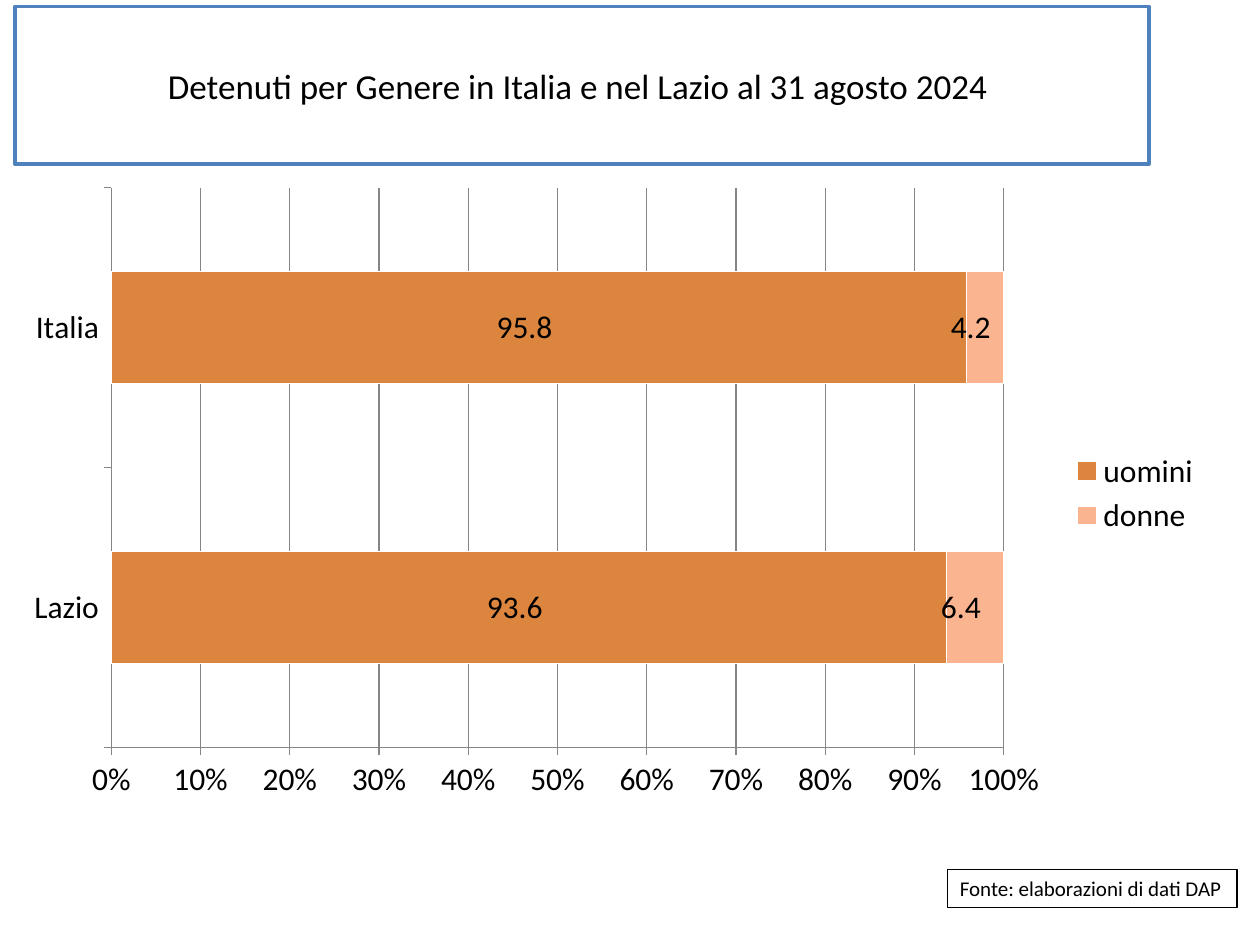
from dataclasses import dataclass

from lxml.etree import SubElement
from pptx import Presentation
from pptx.chart.data import CategoryChartData
from pptx.dml.color import RGBColor
from pptx.enum.chart import XL_CHART_TYPE, XL_LABEL_POSITION, XL_LEGEND_POSITION, XL_TICK_MARK
from pptx.enum.text import MSO_ANCHOR, PP_ALIGN
from pptx.oxml.ns import qn
from pptx.util import Cm, Pt


@dataclass(frozen=True)
class Theme:
    font: str = "Calibri"
    text: str = "000000"
    paper: str = "FFFFFF"
    accent: str = "4F81BD"
    grid: str = "868686"
    men: str = "DC853E"
    women: str = "FAB490"
    title_size: int = 20
    chart_size: int = 18
    source_size: int = 12


class PageBuilder:
    """Holds the theme and the current slide."""

    def __init__(self, theme, page):
        self.theme = theme
        self.page = page

    def style_font(self, font, size):
        font.name = self.theme.font
        font.size = Pt(size)
        font.bold = False
        font.color.rgb = RGBColor.from_string(self.theme.text)

    def paint(self, item, fill, line, width):
        item.fill.solid()
        item.fill.fore_color.rgb = RGBColor.from_string(fill)
        self.paint_line(item.line, line, width)

    def paint_line(self, line, color, width):
        line.color.rgb = RGBColor.from_string(color)
        line.width = Pt(width)

    def set_text(self, box, text, size, align):
        para = box.text_frame.paragraphs[0]
        para.text = text
        para.alignment = align
        self.style_font(para.font, size)

    def title(self, text, left, top, width, height):
        box = self.page.shapes.title
        box.left, box.top, box.width, box.height = left, top, width, height
        self.paint(box, self.theme.paper, self.theme.accent, 2)
        box.text_frame.vertical_anchor = MSO_ANCHOR.MIDDLE
        self.set_text(box, text, self.theme.title_size, PP_ALIGN.CENTER)

    def source_note(self, text, left, top, width, height):
        box = self.page.shapes.add_textbox(left, top, width, height)
        self.paint(box, self.theme.paper, self.theme.text, 0.75)
        box.text_frame.word_wrap = False
        self.set_text(box, text, self.theme.source_size, PP_ALIGN.LEFT)

    def share_chart(self, categories, series, left, top, width, height):
        data = CategoryChartData()
        data.categories = categories
        for name, values, _ in series:
            data.add_series(name, values)
        chart = self.page.shapes.add_chart(
            XL_CHART_TYPE.BAR_STACKED_100, left, top, width, height, data).chart
        chart.has_title = False
        self.style_font(chart.font, self.theme.chart_size)

        # Bars and value labels
        plot = chart.plots[0]
        plot.gap_width, plot.overlap = 150, 100
        plot.vary_by_categories = False
        for bars, (_, _, color) in zip(plot.series, series):
            self.paint(bars.format, color, self.theme.paper, 0.75)
            labels = bars.data_labels
            labels.show_value = True
            labels.position = XL_LABEL_POSITION.CENTER
            labels.number_format = "#,##0.0\\ _€_-"
            labels.number_format_is_linked = False

        # Axes and grid
        for axis in (chart.category_axis, chart.value_axis):
            axis.major_tick_mark = XL_TICK_MARK.OUTSIDE
            axis.minor_tick_mark = XL_TICK_MARK.NONE
            self.paint_line(axis.format.line, self.theme.grid, 0.75)
        scale = chart.value_axis
        scale.minimum_scale, scale.maximum_scale, scale.major_unit = 0, 1, 0.1
        scale.has_major_gridlines = True
        self.paint_line(scale.major_gridlines.format.line, self.theme.grid, 0.75)
        scale.tick_labels.number_format = "0%"
        scale.tick_labels.number_format_is_linked = False

        # Legend
        chart.has_legend = True
        chart.legend.position = XL_LEGEND_POSITION.RIGHT
        chart.legend.include_in_layout = False
        self.place_plot(chart, x=0.08, y=0.02, w=0.74, h=0.88)

    def place_plot(self, chart, **shares):
        """Fix the inner plot area as shares of the chart frame."""
        area = chart.element.find(f".//{qn('c:plotArea')}")
        for old in area.findall(qn("c:layout")):
            area.remove(old)
        layout = SubElement(area, qn("c:layout"))
        area.insert(0, layout)
        manual = SubElement(layout, qn("c:manualLayout"))
        settings = {"layoutTarget": "inner", "xMode": "edge", "yMode": "edge", **shares}
        for tag, value in settings.items():
            SubElement(manual, qn(f"c:{tag}")).set("val", str(value))


def main():
    theme = Theme()
    deck = Presentation()
    deck.slide_width, deck.slide_height = Cm(25.4), Cm(19.05)
    builder = PageBuilder(theme, deck.slides.add_slide(deck.slide_layouts[5]))

    builder.title("Detenuti per Genere in Italia e nel Lazio al 31 agosto 2024 ",
                  Cm(0.3), Cm(0.13), Cm(22.86), Cm(3.18))
    builder.share_chart(
        ["Lazio", "Italia"],
        [("uomini ", (93.6, 95.8), theme.men), ("donne", (6.4, 4.2), theme.women)],
        Cm(0.3), Cm(3.53), Cm(24.31), Cm(12.83))
    builder.source_note("Fonte: elaborazioni di dati DAP",
                        Cm(19.1), Cm(17.53), Cm(5.84), Cm(0.77))
    deck.save("out.pptx")


if __name__ == "__main__":
    main()
